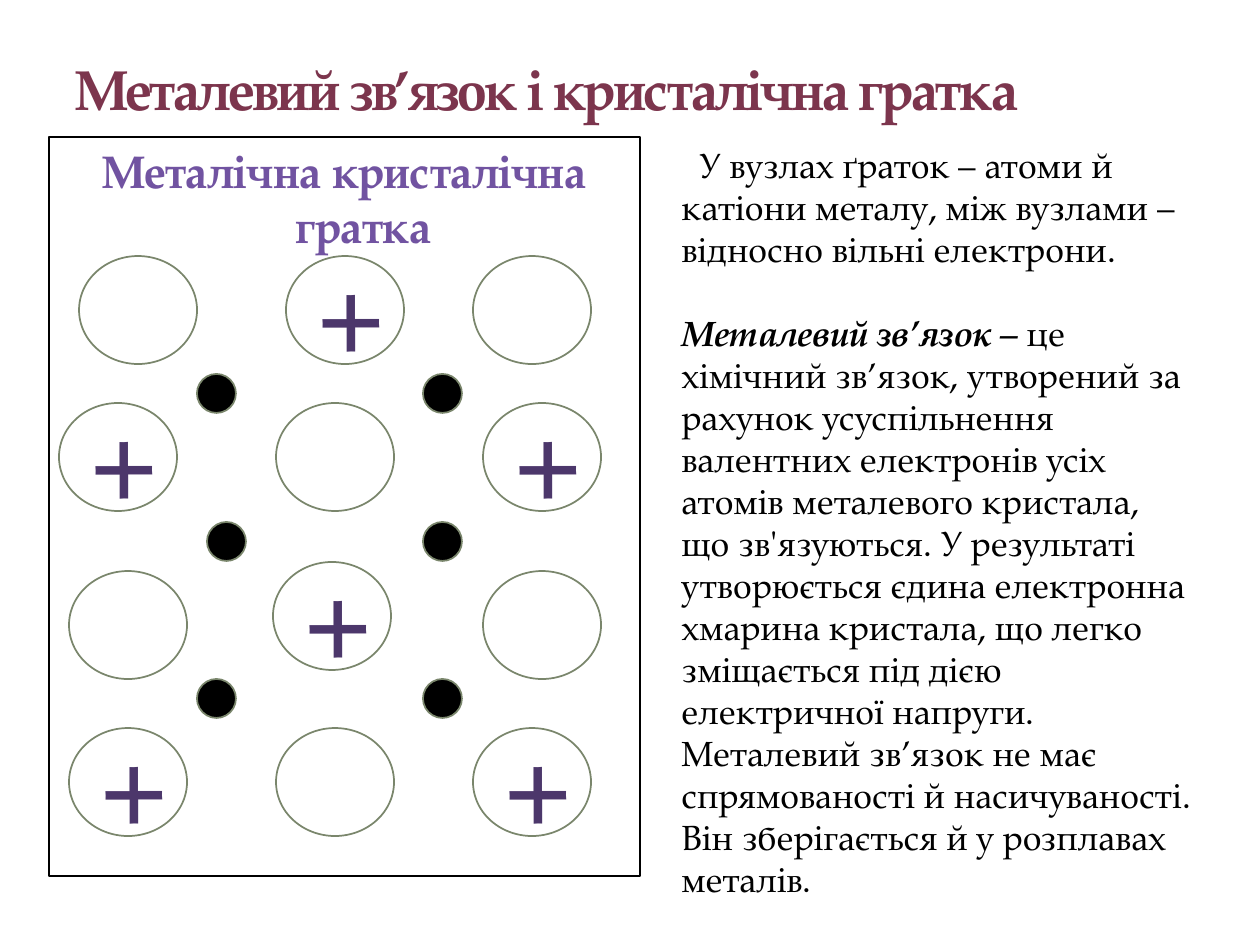
from pptx import Presentation
from pptx.dml.color import RGBColor
from pptx.enum.shapes import MSO_SHAPE
from pptx.enum.text import MSO_ANCHOR, PP_ALIGN
from pptx.util import Emu, Pt

SCALE = 914400 / 126
BLACK = RGBColor(0, 0, 0)
WHITE = RGBColor(255, 255, 255)
WINE = RGBColor(0x7C, 0x35, 0x4D)
LILAC = RGBColor(0x71, 0x53, 0xA1)
PLUM = RGBColor(0x4C, 0x37, 0x6B)
MOSS = RGBColor(0x7A, 0x86, 0x6C)

FACE = "TeX Gyre Pagella"
HEAD = {"name": FACE, "size": Pt(32), "bold": True}
SUB = {"name": FACE, "size": Pt(26), "bold": True}
PLUS = {"name": FACE, "size": Pt(54), "bold": True}
BODY = {"name": FACE, "size": Pt(20), "bold": False, "italic": False}
TERM = {**BODY, "bold": True, "italic": True}

deck = Presentation()
deck.slide_width, deck.slide_height = Emu(9144000), Emu(6858000)
slide = deck.slides.add_slide(deck.slide_layouts[6])


def write(para, text, style, color):
    run = para.add_run()
    run.text = text
    for key, value in style.items():
        setattr(run.font, key, value)
    run.font.color.rgb = color
    return run


def draw(kind, box, fill, line, width):
    shape = slide.shapes.add_shape(kind, *[Emu(round(v * SCALE)) for v in box])
    shape.shadow.inherit = False
    shape.fill.solid()
    shape.fill.fore_color.rgb = fill
    shape.line.color.rgb = line
    shape.line.width = Pt(width)
    return shape


panel = draw(MSO_SHAPE.RECTANGLE, (49, 137, 591, 739), WHITE, BLACK, 0.75)
frame = panel.text_frame
frame.vertical_anchor = MSO_ANCHOR.TOP
para = frame.paragraphs[0]
para.alignment = PP_ALIGN.CENTER
props = para._p.get_or_add_pPr()
props.set("marL", str(round(38 * SCALE)))
props.set("indent", str(round(-38 * SCALE)))
write(para, "Металічна кристалічна гратка", SUB, LILAC)

frames = []
for box in ((63, 21, 1134, 107), (669, 137, 552, 776)):
    area = slide.shapes.add_textbox(*[Emu(round(v * SCALE)) for v in box])
    area.text_frame.word_wrap = True
    frames.append(area.text_frame)
title, notes = frames

title.vertical_anchor = MSO_ANCHOR.BOTTOM
run = write(title.paragraphs[0], "Металевий зв’язок і кристалічна гратка", HEAD, WINE)
run.font._element.set("spc", "-100")

ROWS = (
    (256, ((79, ""), (286, "+"), (473, ""))),
    (403, ((59, "+"), (276, ""), (483, "+"))),
    (571, ((69, ""), (273, "+"), (483, ""))),
    (728, ((69, "+"), (276, ""), (473, "+"))),
)
for top, row in ROWS:
    for left, sign in row:
        rise = 9 if (top, sign) == (571, "+") else 0
        atom = draw(MSO_SHAPE.OVAL, (left, top - rise, 118, 108), WHITE, MOSS, 1)
        if sign:
            atom.text_frame.vertical_anchor = MSO_ANCHOR.MIDDLE
            para = atom.text_frame.paragraphs[0]
            para.alignment = PP_ALIGN.CENTER
            write(para, sign, PLUS, PLUM)

for top, first in ((374, 197), (522, 207), (679, 197)):
    for left in (first, 423):
        draw(MSO_SHAPE.FLOWCHART_CONNECTOR, (left, top, 39, 39), BLACK, MOSS, 1)

TEXTS = (
    ("", "У вузлах ґраток – атоми й"),
    ("", "катіони металу, між вузлами –"),
    ("", "відносно вільні електрони."),
    ("Металевий зв’язок –", " це хімічний зв’язок, утворений за рахунок "
     "усуспільнення валентних електронів усіх атомів металевого кристала,"),
    ("", "що зв'язуються. У результаті утворюється єдина електронна хмарина "
     "кристала, що легко зміщається під дією електричної напруги."),
    ("", "Металевий зв’язок не має спрямованості й насичуваності. "
     "Він зберігається й у розплавах металів."),
)
for i, (term, text) in enumerate(TEXTS):
    para = notes.paragraphs[0] if i == 0 else notes.add_paragraph()
    if i == 0:
        para._p.get_or_add_pPr().set("indent", str(round(18 * SCALE)))
    if term:
        para.space_before = Pt(24)
        write(para, term, TERM, BLACK)
    write(para, text, BODY, BLACK)

deck.save("out.pptx")
